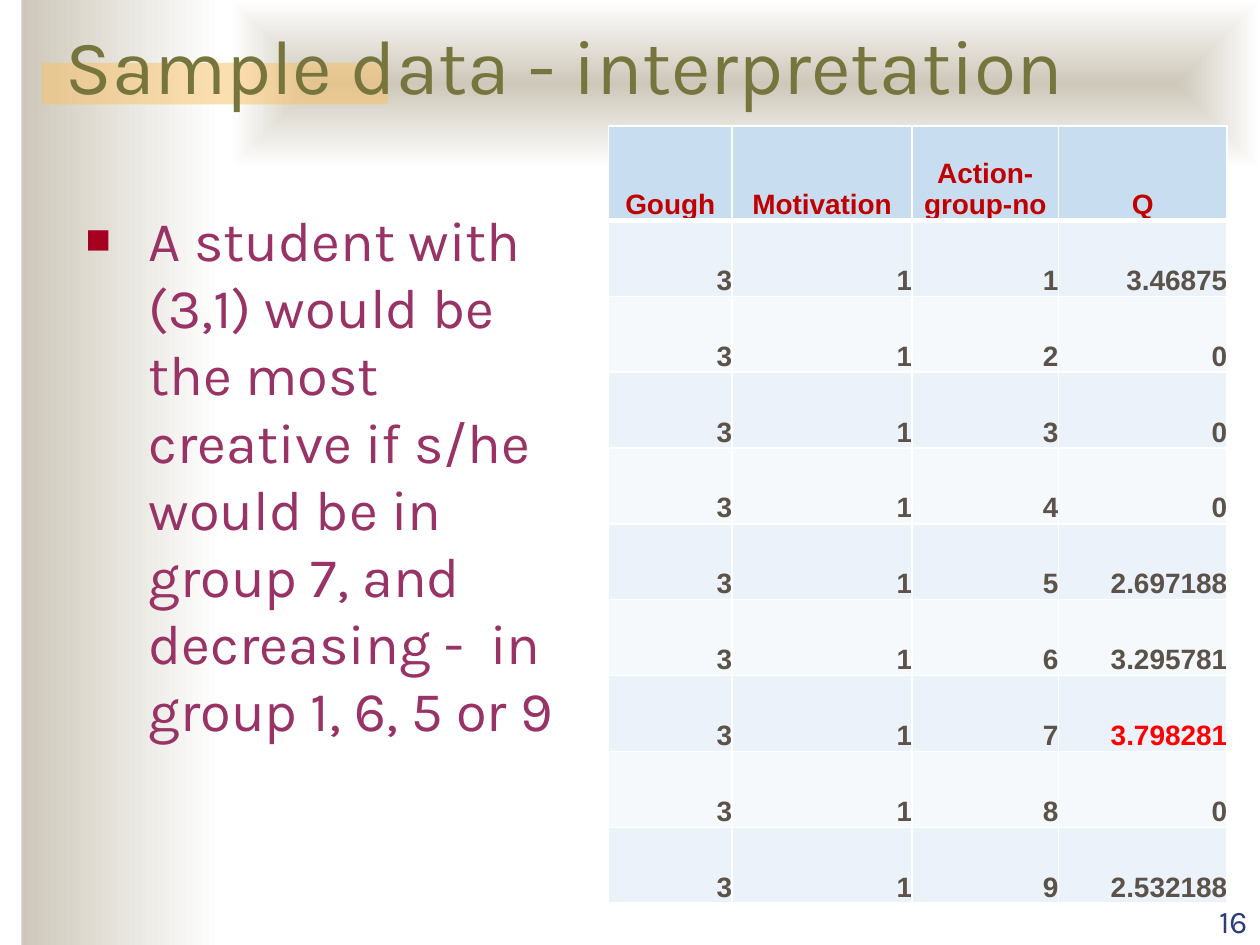
from lxml.etree import SubElement
from pptx import Presentation
from pptx.dml.color import RGBColor
from pptx.enum.shapes import MSO_SHAPE
from pptx.enum.text import MSO_ANCHOR, MSO_AUTO_SIZE, PP_ALIGN
from pptx.oxml.ns import qn
from pptx.util import Inches, Pt

TITLE = "Sample data - interpretation"
BODY = ("A student with (3,1) would be the most creative if s/he would be in "
        "group 7, and decreasing -  in group 1, 6, 5 or 9")
PAGE_NUMBER = "16"

HEADERS = ["Gough", "Motivation", "Action-group-no", "Q"]
GOUGH, MOTIVATION = "3", "1"
SCORES = ["3.46875", "0", "0", "0", "2.697188", "3.295781", "3.798281", "0", "2.532188"]
BEST_SCORE = max(SCORES, key=float)
COLUMN_WIDTHS = [0.98, 1.43, 1.16, 1.34]
TABLE_HEIGHT, HEADER_HEIGHT = 6.17, 0.75
ROW_HEIGHT = (TABLE_HEIGHT - HEADER_HEIGHT) / len(SCORES)

# left, top, width, height
BOXES = {
    "side band": (0.17, 0, 1.58, 7.5),
    "top band": (1.83, 0, 8.17, 1.33),
    "title accent": (0.33, 0.5, 2.75, 0.33),
    "title": (0.42, 0, 8.5, 0.92),
    "body": (0.58, 1.58, 4.17, 4.92),
    "page number": (9, 7.01, 1, 0.5),
    "table": (4.83, 1, sum(COLUMN_WIDTHS), TABLE_HEIGHT),
}

THEME = {
    "band": "CEC8BA", "white": "FFFFFF", "accent": "FAC164", "bullet": "A50021",
    "header fill": "C9DDF1", "row fills": ("EBF2FA", "F5F9FC"),
    "title": {"name": "Karla", "size": 44, "color": "76753E"},
    "body": {"name": "Karla", "size": 32, "color": "993366"},
    "page number": {"name": "Karla", "size": 18, "color": "2A3D7A"},
    "header": {"name": "Arial", "size": 16, "color": "C00000", "bold": True},
    "cell": {"name": "Arial", "size": 16, "color": "5B5249", "bold": True},
    "best": {"name": "Arial", "size": 16, "color": "FF0000", "bold": True},
}


def set_all(target, values):
    for name, value in values.items():
        setattr(target, name, value)


def inches(name):
    return [Inches(length) for length in BOXES[name]]


def place(shape, name):
    set_all(shape, dict(zip(("left", "top", "width", "height"), inches(name))))


def write(text_frame, text, style, alignment):
    values = dict(THEME[style])
    color = values.pop("color")
    values["size"] = Pt(values["size"])
    paragraph = text_frame.paragraphs[0]
    paragraph.alignment = alignment
    run = paragraph.add_run()
    run.text = text
    set_all(run.font, values)
    run.font.color.rgb = RGBColor.from_string(color)
    return paragraph


def add_band(slide, name):
    shape = slide.shapes.add_shape(MSO_SHAPE.RECTANGLE, *inches(name))
    shape.shadow.inherit = False
    shape.line.fill.background()
    return shape


def fill_gradient(shape, from_center=False):
    shape.fill.gradient()
    shape.fill.gradient_angle = 0
    for stop, color in zip(shape.fill.gradient_stops, ("band", "white")):
        stop.color.rgb = RGBColor.from_string(THEME[color])
    if from_center:
        gradient = shape.element.spPr.find(qn("a:gradFill"))
        gradient.remove(gradient.find(qn("a:lin")))
        center = SubElement(gradient, qn("a:path"), {"path": "shape"})
        SubElement(center, qn("a:fillToRect"), dict.fromkeys("ltrb", "50000"))


def add_backdrop(slide):
    """Draw the bands and the accent behind the placeholders."""
    side, top, accent = [add_band(slide, name)
                         for name in ("side band", "top band", "title accent")]
    fill_gradient(side)
    fill_gradient(top, from_center=True)
    accent.fill.solid()
    accent.fill.fore_color.rgb = RGBColor.from_string(THEME["accent"])
    color = accent.element.spPr.find(qn("a:solidFill"))[0]
    SubElement(color, qn("a:alpha"), {"val": "50000"})
    tree = side.element.getparent()
    for position, shape in enumerate((side, top, accent), start=2):
        tree.insert(position, shape.element)


def add_bullet(paragraph):
    paragraph.space_before = Pt(0)
    properties = paragraph._p.get_or_add_pPr()
    indents = {"marL": Inches(0.5), "indent": Inches(-0.5)}
    for name, value in indents.items():
        properties.set(name, str(value))
    color = SubElement(properties, qn("a:buClr"))
    SubElement(color, qn("a:srgbClr"), {"val": THEME["bullet"]})
    SubElement(properties, qn("a:buSzPct"), {"val": "75000"})
    SubElement(properties, qn("a:buFont"), {"typeface": "Arial"})
    SubElement(properties, qn("a:buChar"), {"char": "■"})


def format_cell(cell, row, fill):
    set_all(cell, dict.fromkeys(
        ("margin_left", "margin_top", "margin_right", "margin_bottom"), 0))
    cell.vertical_anchor = MSO_ANCHOR.BOTTOM
    widths = {"L": 1, "R": 1, "T": 3 if row == 1 else 1, "B": 3 if row == 0 else 1}
    properties = cell._tc.get_or_add_tcPr()
    for side, width in widths.items():
        line = SubElement(properties, qn(f"a:ln{side}"), {"w": str(Pt(width))})
        solid = SubElement(line, qn("a:solidFill"))
        SubElement(solid, qn("a:srgbClr"), {"val": THEME["white"]})
    cell.fill.solid()
    cell.fill.fore_color.rgb = RGBColor.from_string(fill)


def add_score_table(slide):
    rows = [HEADERS] + [[GOUGH, MOTIVATION, str(group), score]
                        for group, score in enumerate(SCORES, start=1)]
    table = slide.shapes.add_table(len(rows), len(HEADERS), *inches("table")).table
    for column, width in zip(table.columns, COLUMN_WIDTHS):
        column.width = Inches(width)
    for row, texts in enumerate(rows):
        table.rows[row].height = Inches(ROW_HEIGHT if row else HEADER_HEIGHT)
        fill = THEME["row fills"][(row - 1) % 2] if row else THEME["header fill"]
        for column, text in enumerate(texts):
            cell = table.cell(row, column)
            format_cell(cell, row, fill)
            style = "header" if row == 0 else "best" if text == BEST_SCORE else "cell"
            alignment = PP_ALIGN.RIGHT if row else PP_ALIGN.CENTER
            write(cell.text_frame, text, style, alignment)


def main():
    presentation = Presentation()
    set_all(presentation, {"slide_width": Inches(10), "slide_height": Inches(7.5)})
    slide = presentation.slides.add_slide(presentation.slide_layouts[1])
    add_backdrop(slide)

    title, body = slide.shapes.title, slide.placeholders[1]
    page_number = slide.shapes.add_textbox(*inches("page number"))
    for shape, name, text, alignment, anchor in (
        (title, "title", TITLE, PP_ALIGN.LEFT, MSO_ANCHOR.BOTTOM),
        (body, "body", BODY, PP_ALIGN.LEFT, MSO_ANCHOR.TOP),
        (page_number, "page number", PAGE_NUMBER, PP_ALIGN.RIGHT, MSO_ANCHOR.BOTTOM),
    ):
        place(shape, name)
        set_all(shape.text_frame, {"word_wrap": True, "vertical_anchor": anchor,
                                   "auto_size": MSO_AUTO_SIZE.NONE})
        paragraph = write(shape.text_frame, text, name, alignment)
        if shape is body:
            add_bullet(paragraph)

    add_score_table(slide)
    presentation.save("out.pptx")


if __name__ == "__main__":
    main()
